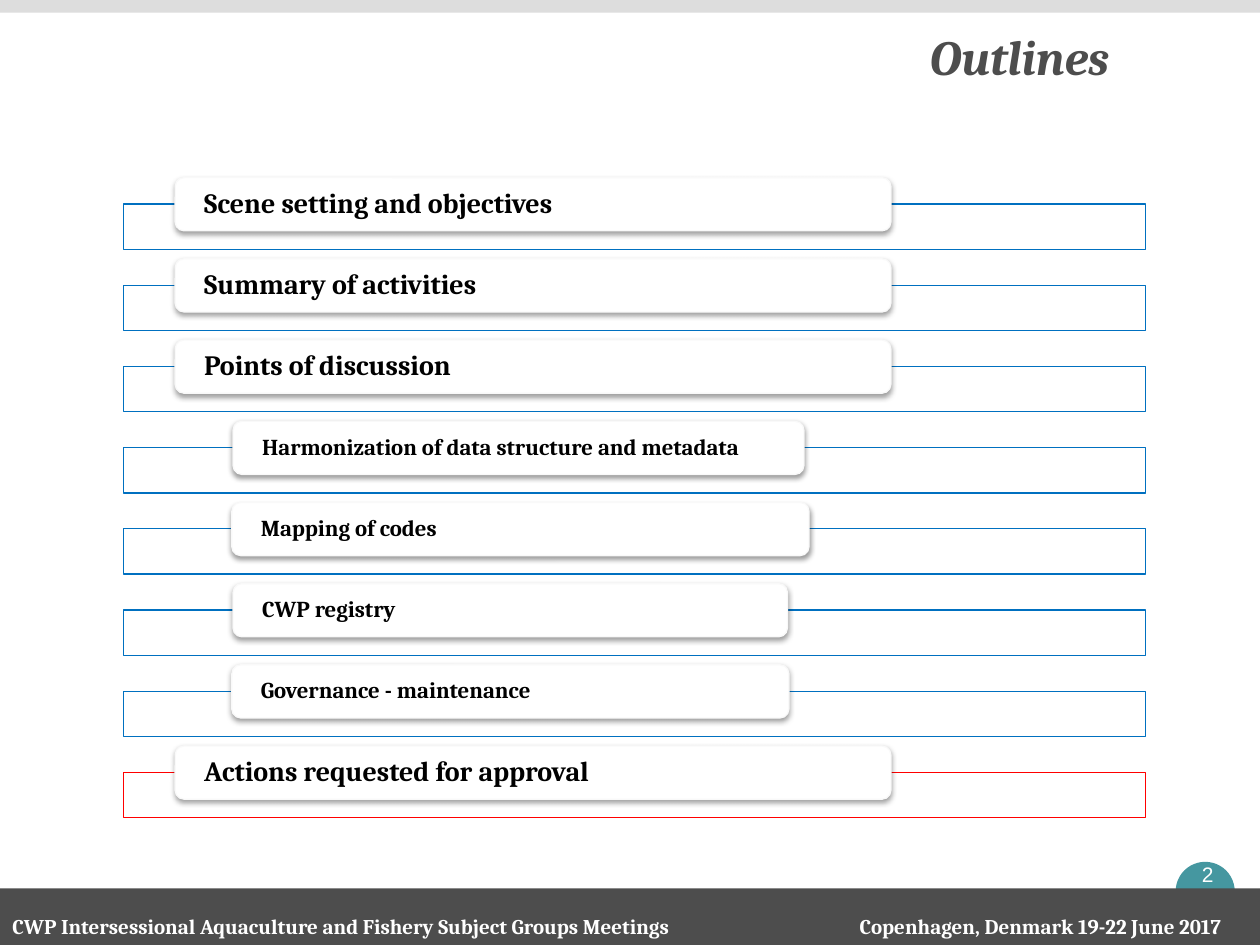
"""Build the outline slide of the meeting deck."""
import pptx
import pptx.util
import pptx.dml.color
import pptx.enum.shapes
import pptx.enum.text
import pptx.oxml
import pptx.oxml.ns

Pt = pptx.util.Pt
KIND = pptx.enum.shapes.MSO_SHAPE
ALIGN = pptx.enum.text.PP_ALIGN
MIDDLE = pptx.enum.text.MSO_ANCHOR.MIDDLE
NS = pptx.oxml.ns.nsdecls("a")

BLUE, RED = "0070C0", "FF0000"
MAIN = (100.1, 409, 16)
TOPICS = [
    ("Scene setting and objectives", MAIN, BLUE),
    ("Summary of activities", MAIN, BLUE),
    ("Points of discussion", MAIN, BLUE),
    ("Harmonization of data structure and metadata", (133.2, 326.2, 13), BLUE),
    ("Mapping of codes", (132.5, 329.8, 13), BLUE),
    ("CWP registry", (133.2, 316.8, 13), BLUE),
    ("Governance - maintenance", (132.5, 318.3, 13), BLUE),
    ("Actions requested for approval", MAIN, RED),
]
EVENT = "CWP Intersessional Aquaculture and Fishery Subject Groups Meetings"
PLACE = "Copenhagen, Denmark 19-22 June 2017"
TOP, PITCH, LIFT = 116.64, 46.4, 15.1

SHADOW = (
    f'<a:effectLst {NS}><a:outerShdw blurRad="{Pt(3.1)}" dist="{Pt(1.6)}" '
    'dir="5400000" rotWithShape="0"><a:srgbClr val="000000">'
    '<a:alpha val="38000"/></a:srgbClr></a:outerShdw></a:effectLst>'
)
TABS = f'<a:tabLst {NS}><a:tab pos="{Pt(484.2)}" algn="l"/></a:tabLst>'


def rgb(code):
    return pptx.dml.color.RGBColor.from_string(code)


def draw(slide, kind, box, fill, line=None):
    shape = slide.shapes.add_shape(kind, *map(Pt, box))
    shape.shadow.inherit = False
    shape.fill.solid()
    shape.fill.fore_color.rgb = rgb(fill)
    if line:
        shape.line.color.rgb = rgb(line)
        shape.line.width = Pt(0.75)
    else:
        shape.line.fill.background()
    return shape


def write(shape, text, size, color, align=ALIGN.LEFT, face="Cambria",
          bold=True, slant=False):
    shape.text_frame.word_wrap = True
    para = shape.text_frame.paragraphs[0]
    para.alignment = align
    run = para.add_run()
    run.text = text
    font = run.font
    font.name, font.size = face, Pt(size)
    font.bold, font.italic = bold, slant
    font.color.rgb = rgb(color)
    return para


def label(slide, box, *words, **style):
    shape = slide.shapes.add_textbox(*map(Pt, box))
    return shape, write(shape, *words, **style)


def frame(slide):
    draw(slide, KIND.RECTANGLE, (0, -2.2, 720, 9.4), "DDDDDD")
    draw(slide, KIND.OVAL, (671.8, 492.5, 33.8, 33.8), "4597A0")
    label(slide, (663.8, 488.9, 52.6, 21.6), "2", 12, "FFFFFF",
          align=ALIGN.CENTER, face="Arial", bold=False)
    draw(slide, KIND.RECTANGLE, (0, 507.6, 720, 33.8), "4D4D4D")
    _, foot = label(slide, (0, 518.4, 720, 21.6), f"{EVENT}\t{PLACE}", 12,
                    "FFFFFF")
    foot._p.get_or_add_pPr().append(pptx.oxml.parse_xml(TABS))
    title, _ = label(slide, (462.2, 3.6, 178.6, 56.9), "Outlines", 28,
                     "4D4D4D", align=ALIGN.RIGHT, slant=True)
    title.text_frame.vertical_anchor = MIDDLE


def topic(slide, row, text, level, color):
    left, width, size = level
    top = TOP + row * PITCH
    draw(slide, KIND.RECTANGLE, (70.6, top, 584, 25.9), "FFFFFF", color)
    pill = draw(slide, KIND.ROUNDED_RECTANGLE,
                (left, top - LIFT, width, 30.4), "FFFFFF", "F9F9F9")
    pill.shadow.inherit = True
    pill._element.spPr.append(pptx.oxml.parse_xml(SHADOW))
    body = pill.text_frame
    body.margin_left = body.margin_right = Pt(15.1)
    body.margin_top = body.margin_bottom = 0
    body.vertical_anchor = MIDDLE
    write(pill, text, size, "000000").line_spacing = 0.9


def main():
    deck = pptx.Presentation()
    deck.slide_width, deck.slide_height = Pt(720), Pt(540)
    slide = deck.slides.add_slide(deck.slide_layouts[6])
    frame(slide)
    for row, item in enumerate(TOPICS):
        topic(slide, row, *item)
    deck.save("out.pptx")


if __name__ == "__main__":
    main()
